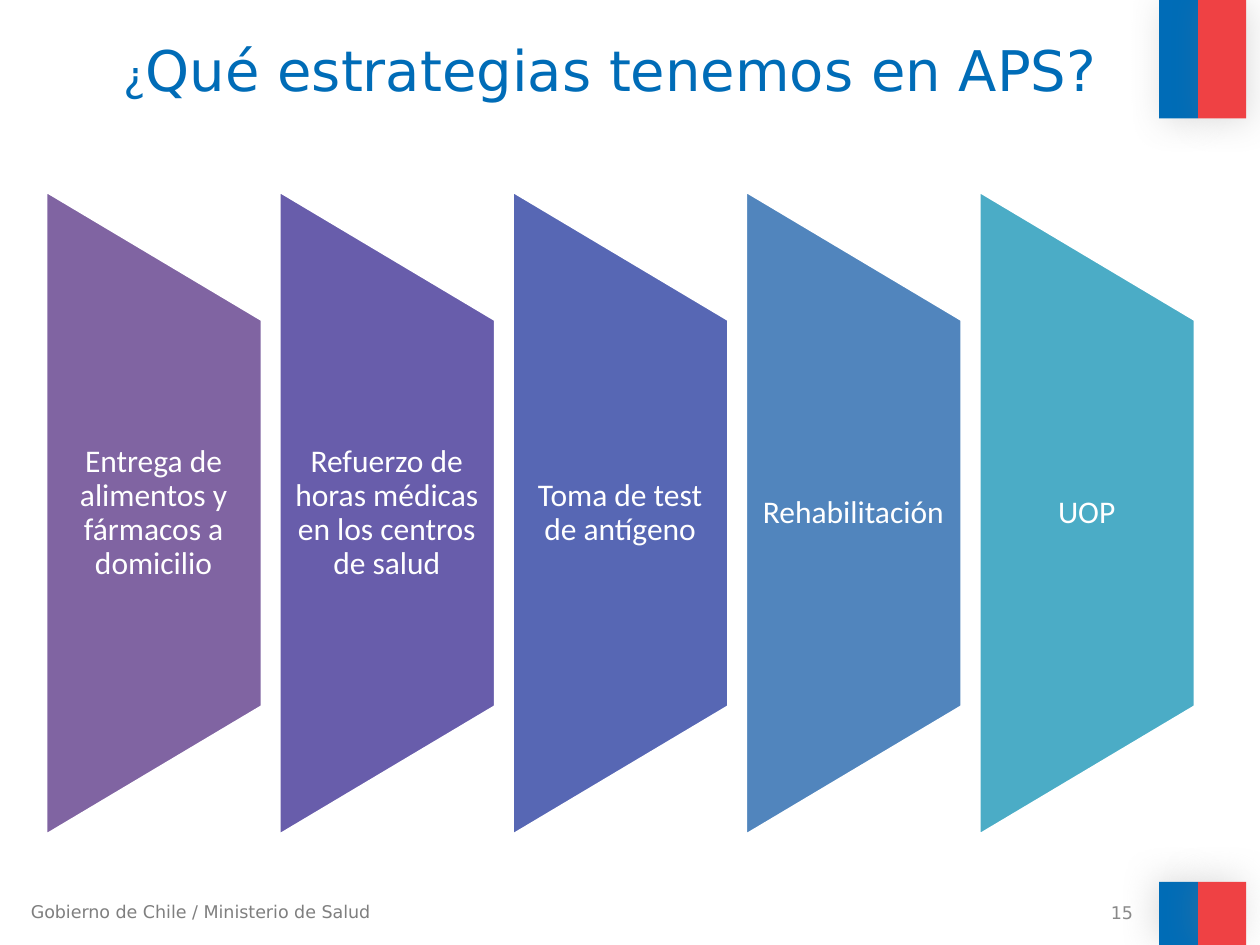
"""Builds the slide on primary care strategies."""
import pptx
import pptx.util
import pptx.oxml
import pptx.dml.color
import pptx.enum.shapes
import pptx.enum.text

Pt = pptx.util.Pt
Shape = pptx.enum.shapes.MSO_SHAPE
Align = pptx.enum.text.PP_ALIGN
Anchor = pptx.enum.text.MSO_ANCHOR

COLORS = {
    "blue": "006CB7", "red": "EF4144", "white": "FFFFFF",
    "gray": "7F7F7F", "pale": "898989", "shade": "808080",
    "plum": "8064A2", "violet": "685DAB", "indigo": "5767B4",
    "steel": "5185BD", "teal": "4BACC6",
}
PANELS = [
    ("Entrega de alimentos y fármacos a domicilio", "plum"),
    ("Refuerzo de horas médicas en los centros de salud", "violet"),
    ("Toma de test de antígeno", "indigo"),
    ("Rehabilitación", "steel"),
    ("UOP", "teal"),
]
LEFT, STEP, WIDE, TALL, MID = 26.1, 133.3, 123.8, 368.6, 293.2


def tint(name):
    return pptx.dml.color.RGBColor.from_string(COLORS[name])


def add_text(slide, box, *runs, color, font="DejaVu Sans", align=Align.LEFT,
             anchor=Anchor.TOP, inset=(7.2, 3.6, 7.2, 3.6), space=1.0):
    frame = slide.shapes.add_textbox(*map(Pt, box)).text_frame
    frame.word_wrap = True
    frame.vertical_anchor = anchor
    (frame.margin_left, frame.margin_top,
     frame.margin_right, frame.margin_bottom) = map(Pt, inset)
    para = frame.paragraphs[0]
    para.alignment = align
    para.line_spacing = space
    for words, size in runs:
        run = para.add_run()
        run.text = words
        run.font.size = Pt(size)
        run.font.name = font
        run.font.color.rgb = tint(color)


def add_block(slide, kind, box, color):
    block = slide.shapes.add_shape(kind, *map(Pt, box))
    block.shadow.inherit = False
    block.fill.solid()
    block.fill.fore_color.rgb = tint(color)
    block.line.fill.background()
    return block


def add_shade(block, angle):
    glow = pptx.oxml.parse_xml(
        '<a:outerShdw xmlns:a="http://schemas.openxmlformats.org/drawingml/2006/main"'
        f' blurRad="{Pt(20)}" dist="{Pt(3)}" dir="{angle * 60000}" rotWithShape="0">'
        f'<a:srgbClr val="{COLORS["shade"]}"><a:alpha val="25000"/></a:srgbClr>'
        '</a:outerShdw>')
    block._element.spPr.find(pptx.oxml.ns.qn("a:effectLst")).append(glow)


def add_flag(slide, top, high, angle):
    for left, wide, color in ((662.4, 22.3, "blue"), (684.7, 27.4, "red")):
        block = add_block(slide, Shape.RECTANGLE, (left, top, wide, high), color)
        add_shade(block, angle)


def add_panel(slide, left, words, color):
    box = (left + (WIDE - TALL) / 2, MID - WIDE / 2, TALL, WIDE)
    panel = add_block(slide, Shape.FLOWCHART_MANUAL_OPERATION, box, color)
    panel.rotation = 270
    panel.line.color.rgb = tint("white")
    panel.line.width = Pt(2)
    high = TALL * 0.6
    add_text(slide, (left, MID - high / 2, WIDE, high), (words, 18),
             color="white", font="Calibri", align=Align.CENTER,
             anchor=Anchor.MIDDLE, inset=(8.6, 0, 9.1, 0), space=0.9)


def main():
    deck = pptx.Presentation()
    deck.slide_width, deck.slide_height = Pt(720), Pt(540)
    slide = deck.slides.add_slide(deck.slide_layouts[6])
    add_flag(slide, 0, 67.6, 45)
    add_flag(slide, 504, 36, 215)
    add_text(slide, (10.5, 511.2, 217.4, 19.4),
             ("Gobierno de Chile / Ministerio de Salud", 10), color="gray")
    add_text(slide, (-31, 16.6, 759.6, 90), ("¿", 24),
             ("Qué estrategias tenemos en APS?", 32),
             color="blue", align=Align.CENTER)
    add_text(slide, (486.7, 514, 167.8, 15.1), ("15", 10), color="pale",
             align=Align.RIGHT, anchor=Anchor.MIDDLE)
    for rank, (words, color) in enumerate(PANELS):
        add_panel(slide, LEFT + rank * STEP, words, color)
    deck.save("out.pptx")


if __name__ == "__main__":
    main()
